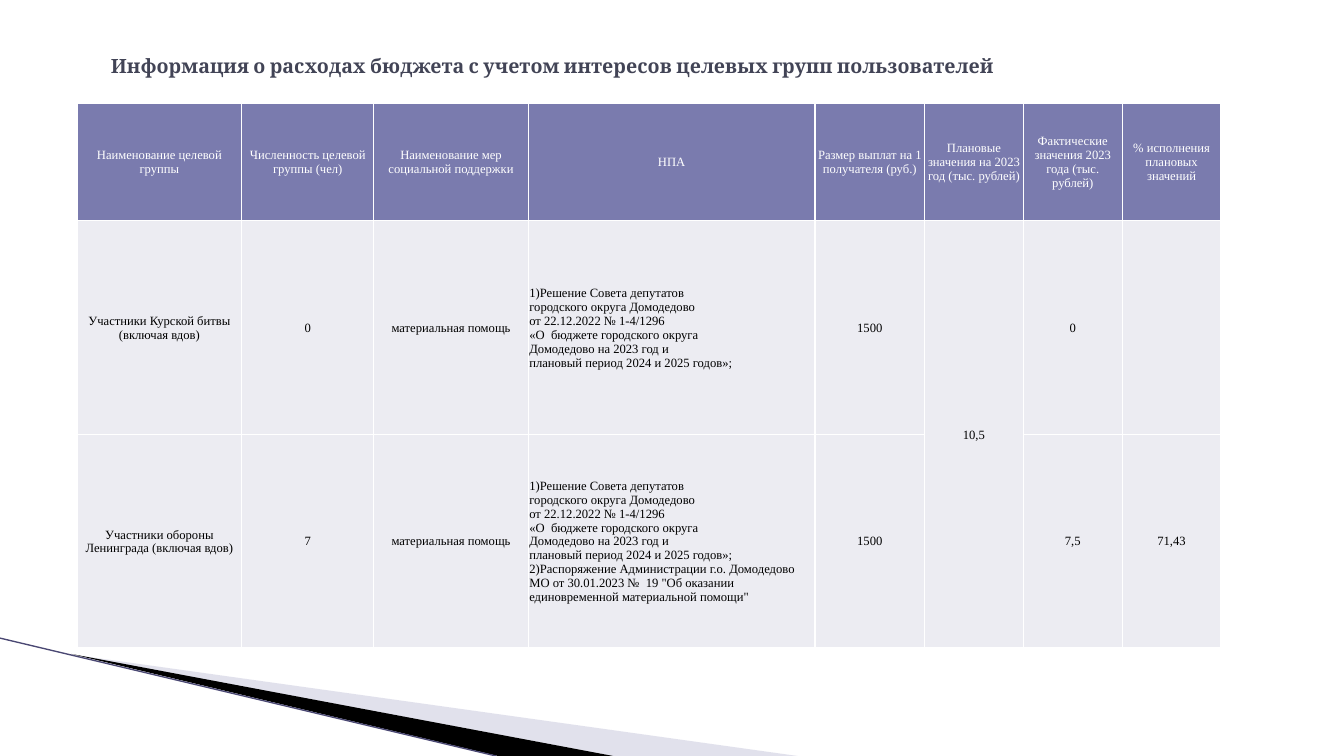
from typing import NamedTuple

from lxml.etree import SubElement
from pptx import Presentation
from pptx.dml.color import RGBColor
from pptx.enum.shapes import MSO_CONNECTOR
from pptx.enum.text import MSO_ANCHOR, PP_ALIGN
from pptx.oxml.ns import qn
from pptx.util import Cm, Pt

COLORS = {
    "title": "424456",
    "header": "7A7BAE",
    "body": "ECECF2",
    "white": "FFFFFF",
    "black": "000000",
    "wedge": "B6B6D1",
    "line": "4A4873",
}
COL_WIDTHS = [4.15, 3.33, 3.89, 7.23, 2.76, 2.49, 2.49, 2.49]
ROW_HEIGHTS = [2.95, 5.39, 5.39]
NPA_COL, PLAN_COL = 3, 5
CELL_FORMAT = {
    "margin_left": Cm(0.03),
    "margin_right": Cm(0.03),
    "margin_top": Cm(0.03),
    "margin_bottom": 0,
    "vertical_anchor": MSO_ANCHOR.MIDDLE,
}
CELL_FONT = {"name": "Times New Roman", "size": Pt(9), "bold": False}
TITLE_FONT = {"name": "Cambria", "size": Pt(14), "bold": True}

TITLE = "Информация о расходах бюджета с учетом интересов целевых групп пользователей"
HEADERS = [
    "Наименование целевой группы",
    "Численность целевой группы (чел)",
    "Наименование мер социальной поддержки",
    "НПА",
    "Размер выплат на 1 получателя (руб.)",
    "Плановые значения на 2023 год (тыс. рублей)",
    "Фактические значения 2023 года (тыс. рублей)",
    "% исполнения плановых значений",
]
SUPPORT = "материальная помощь"
DECISION = """1)Решение Совета депутатов
городского округа Домодедово
от 22.12.2022 № 1-4/1296
«О  бюджете городского округа
Домодедово на 2023 год и
плановый период 2024 и 2025 годов»;"""
ORDER = (' 2)Распоряжение Администрации г.о. Домодедово МО от 30.01.2023 №  19 '
         '"Об оказании единовременной материальной помощи"')


class TargetGroup(NamedTuple):
    name: str
    people: str
    support: str
    npa: str
    payment: str
    plan: str
    fact: str
    percent: str


class Wedge(NamedTuple):
    points: list[tuple[float, float]]
    color: str
    alpha: int


GROUPS = [
    TargetGroup("Участники Курской битвы (включая вдов)", "0", SUPPORT,
                DECISION, "1500", "10,5", "0", ""),
    TargetGroup("Участники обороны Ленинграда (включая вдов)", "7", SUPPORT,
                DECISION + ORDER, "1500", "", "7,5", "71,43"),
]
WEDGES = [
    Wedge([(1.85, 16.5), (20.1, 19.05), (15.45, 19.05)], "wedge", 40),
    Wedge([(1.8, 16.48), (15.45, 19.05), (12.55, 19.05)], "black", 100),
]


def rgb(name: str) -> RGBColor:
    return RGBColor.from_string(COLORS[name])


def apply(target, values: dict) -> None:
    for name, value in values.items():
        setattr(target, name, value)


def add_wedge(s, wedge: Wedge) -> None:
    points = [(Cm(x), Cm(y)) for x, y in wedge.points]
    builder = s.shapes.build_freeform(*points[0])
    builder.add_line_segments(points[1:], close=True)
    sp = builder.convert_to_shape()
    sp.shadow.inherit = False
    sp.line.fill.background()
    sp.fill.solid()
    sp.fill.fore_color.rgb = rgb(wedge.color)
    if wedge.alpha < 100:
        color = sp._element.spPr.find(".//" + qn("a:srgbClr"))
        SubElement(color, qn("a:alpha"), val=str(wedge.alpha * 1000))


def add_edge(s) -> None:
    sp = s.shapes.add_connector(MSO_CONNECTOR.STRAIGHT, 0, Cm(16.08), Cm(12.5), Cm(19.05))
    sp.line.color.rgb = rgb("line")
    sp.line.width = Pt(0.95)
    SubElement(sp._element.spPr, qn("a:effectLst"))


def add_borders(cell) -> None:
    props = cell._tc.get_or_add_tcPr()
    for side in ("lnL", "lnR", "lnT", "lnB"):
        ln = SubElement(props, qn(f"a:{side}"), w=str(Pt(1)))
        fill = SubElement(ln, qn("a:solidFill"))
        SubElement(fill, qn("a:srgbClr"), val=COLORS["white"])


def fill_cell(cell, text: str, fill: str, color: str, align: PP_ALIGN) -> None:
    add_borders(cell)
    apply(cell, CELL_FORMAT)
    cell.fill.solid()
    cell.fill.fore_color.rgb = rgb(fill)
    cell.text = text
    for p in cell.text_frame.paragraphs:
        p.alignment = align
        apply(p.font, CELL_FONT)
        p.font.color.rgb = rgb(color)


def add_groups_table(s) -> None:
    rows = [HEADERS, *GROUPS]
    frame = s.shapes.add_table(len(rows), len(HEADERS), Cm(1.94), Cm(2.6),
                               Cm(sum(COL_WIDTHS)), Cm(sum(ROW_HEIGHTS)))
    table = frame.table
    table.horz_banding = False
    for column, width in zip(table.columns, COL_WIDTHS):
        column.width = Cm(width)
    for row, height in zip(table.rows, ROW_HEIGHTS):
        row.height = Cm(height)
    for i, texts in enumerate(rows):
        fill, color = ("body", "black") if i else ("header", "white")
        for j, text in enumerate(texts):
            align = PP_ALIGN.LEFT if i and j == NPA_COL else PP_ALIGN.CENTER
            fill_cell(table.cell(i, j), text, fill, color, align)
    table.cell(1, PLAN_COL).merge(table.cell(2, PLAN_COL))


def add_title(s) -> None:
    sp = s.shapes.title
    apply(sp, {"left": Cm(2.54), "top": Cm(0.78), "width": Cm(26.6), "height": Cm(1.75)})
    tf = sp.text_frame
    tf.text = TITLE
    tf.vertical_anchor = MSO_ANCHOR.MIDDLE
    p = tf.paragraphs[0]
    p.alignment = PP_ALIGN.LEFT
    apply(p.font, TITLE_FONT)
    p.font.color.rgb = rgb("title")


def main() -> None:
    prs = Presentation()
    prs.slide_width, prs.slide_height = Cm(33.87), Cm(19.05)
    s = prs.slides.add_slide(prs.slide_layouts[5])
    for wedge in WEDGES:
        add_wedge(s, wedge)
    add_edge(s)
    add_title(s)
    add_groups_table(s)
    prs.save("out.pptx")


if __name__ == "__main__":
    main()
